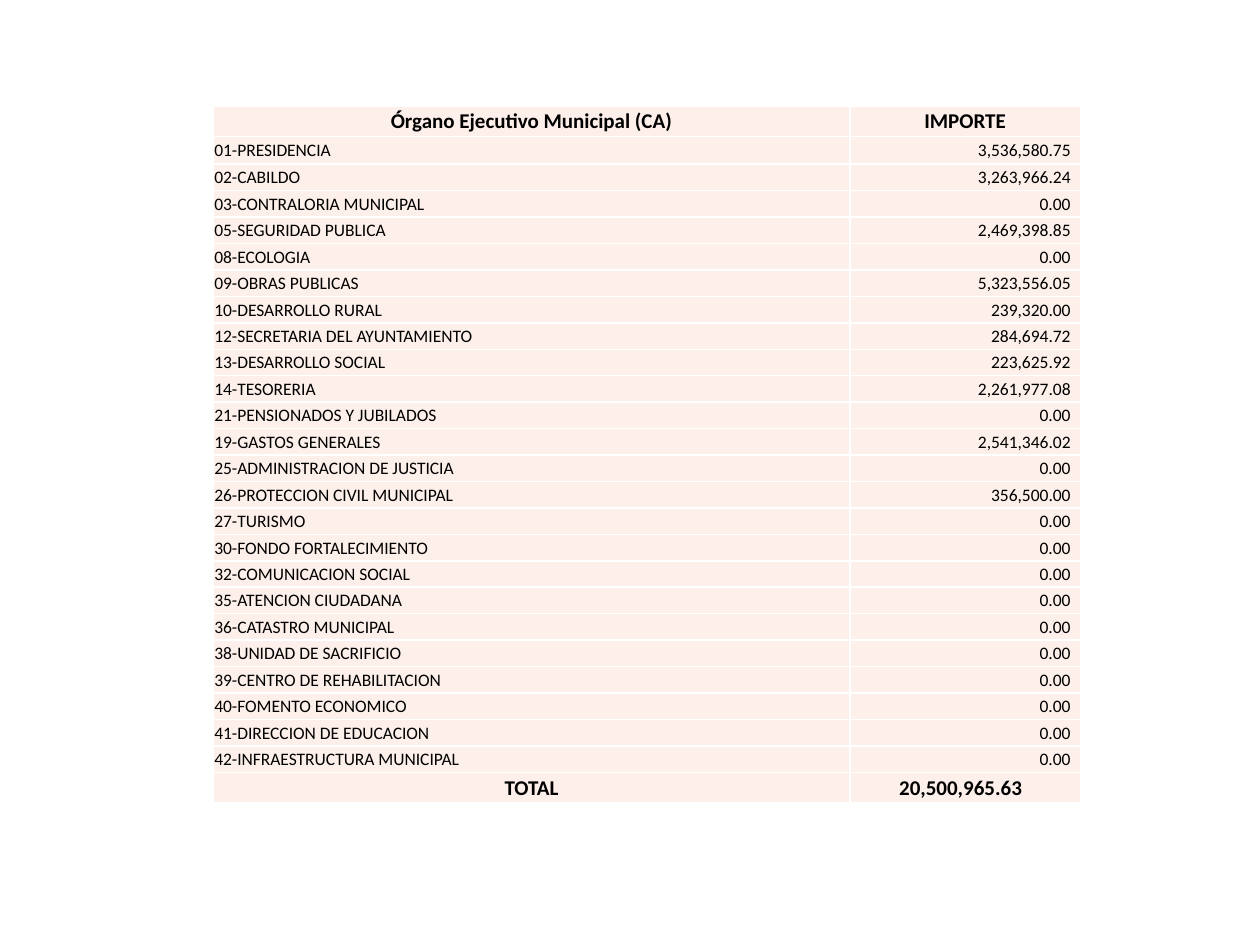
"""Build a slide with the municipal executive budget table."""
from lxml.etree import SubElement
from pptx import Presentation
from pptx.dml.color import RGBColor
from pptx.enum.text import MSO_ANCHOR, PP_ALIGN
from pptx.oxml.ns import qn
from pptx.util import Cm, Pt

HEADER = ("Órgano Ejecutivo Municipal (CA)", "IMPORTE")
DEPARTMENTS = [
    ("01-PRESIDENCIA", "3,536,580.75"),
    ("02-CABILDO", "3,263,966.24"),
    ("03-CONTRALORIA MUNICIPAL", "0.00"),
    ("05-SEGURIDAD PUBLICA", "2,469,398.85"),
    ("08-ECOLOGIA", "0.00"),
    ("09-OBRAS PUBLICAS", "5,323,556.05"),
    ("10-DESARROLLO RURAL", "239,320.00"),
    ("12-SECRETARIA DEL AYUNTAMIENTO", "284,694.72"),
    ("13-DESARROLLO SOCIAL", "223,625.92"),
    ("14-TESORERIA", "2,261,977.08"),
    ("21-PENSIONADOS Y JUBILADOS", "0.00"),
    ("19-GASTOS GENERALES", "2,541,346.02"),
    ("25-ADMINISTRACION DE JUSTICIA", "0.00"),
    ("26-PROTECCION CIVIL MUNICIPAL", "356,500.00"),
    ("27-TURISMO", "0.00"),
    ("30-FONDO FORTALECIMIENTO", "0.00"),
    ("32-COMUNICACION SOCIAL", "0.00"),
    ("35-ATENCION CIUDADANA", "0.00"),
    ("36-CATASTRO MUNICIPAL", "0.00"),
    ("38-UNIDAD DE SACRIFICIO", "0.00"),
    ("39-CENTRO DE REHABILITACION", "0.00"),
    ("40-FOMENTO ECONOMICO", "0.00"),
    ("41-DIRECCION DE EDUCACION", "0.00"),
    ("42-INFRAESTRUCTURA MUNICIPAL", "0.00"),
]
TOTAL = ("TOTAL", "20,500,965.63")
ROWS = [HEADER, *DEPARTMENTS, TOTAL]

LEFT, TOP, HEIGHT = 4.3, 2.14, 14.06
COLUMN_WIDTHS = (12.83, 4.65)
EDGE_HEIGHT, FIRST_HEIGHT = 0.61, 0.56
ROW_HEIGHT = (HEIGHT - 2 * EDGE_HEIGHT - FIRST_HEIGHT) / (len(DEPARTMENTS) - 1)
ROW_HEIGHTS = [EDGE_HEIGHT, FIRST_HEIGHT,
               *[ROW_HEIGHT] * (len(DEPARTMENTS) - 1), EDGE_HEIGHT]

STRONG = {"name": "Calibri", "size": Pt(12), "bold": True}
PLAIN = {"name": "Calibri", "size": Pt(10), "bold": False}
CELL = {"vertical_anchor": MSO_ANCHOR.MIDDLE, "margin_left": Cm(0.02),
        "margin_top": Cm(0.02), "margin_bottom": 0}


def paint(fill, color):
    fill.solid()
    fill.fore_color.rgb = RGBColor.from_string(color)


def apply(target, values):
    for name, value in values.items():
        setattr(target, name, value)


def add_borders(cell, color):
    properties = cell._tc.get_or_add_tcPr()
    for side in ("a:lnL", "a:lnR", "a:lnT", "a:lnB"):
        line = SubElement(properties, qn(side), w=str(Pt(1)))
        solid = SubElement(line, qn("a:solidFill"))
        SubElement(solid, qn("a:srgbClr"), val=color)


def fill_cell(cell, text, alignment, font, margin_right):
    add_borders(cell, "FFFFFF")
    paint(cell.fill, "FDEFE9")
    apply(cell, CELL | {"margin_right": Cm(margin_right)})
    para = cell.text_frame.paragraphs[0]
    para.alignment = alignment
    span = para.add_run()
    span.text = text
    apply(span.font, font)
    paint(span.font.fill, "000000")


def add_budget_table(page):
    table = page.shapes.add_table(
        len(ROWS), len(COLUMN_WIDTHS), Cm(LEFT), Cm(TOP),
        Cm(sum(COLUMN_WIDTHS)), Cm(HEIGHT)).table
    table.horz_banding = False
    for column, width in zip(table.columns, COLUMN_WIDTHS):
        column.width = Cm(width)
    for index, (row, height, texts) in enumerate(zip(table.rows, ROW_HEIGHTS, ROWS)):
        row.height = Cm(height)
        strong = index in (0, len(ROWS) - 1)
        alignments = [PP_ALIGN.CENTER] * 2 if strong else [PP_ALIGN.LEFT, PP_ALIGN.RIGHT]
        margins = (0.02, 0.02 if index == 0 else 0.2)
        for cell, text, alignment, margin in zip(row.cells, texts, alignments, margins):
            fill_cell(cell, text, alignment, STRONG if strong else PLAIN, margin)


def main():
    deck = Presentation()
    deck.slide_width, deck.slide_height = Cm(25.4), Cm(19.05)
    page = deck.slides.add_slide(deck.slide_layouts[6])
    add_budget_table(page)
    deck.save("out.pptx")


if __name__ == "__main__":
    main()
